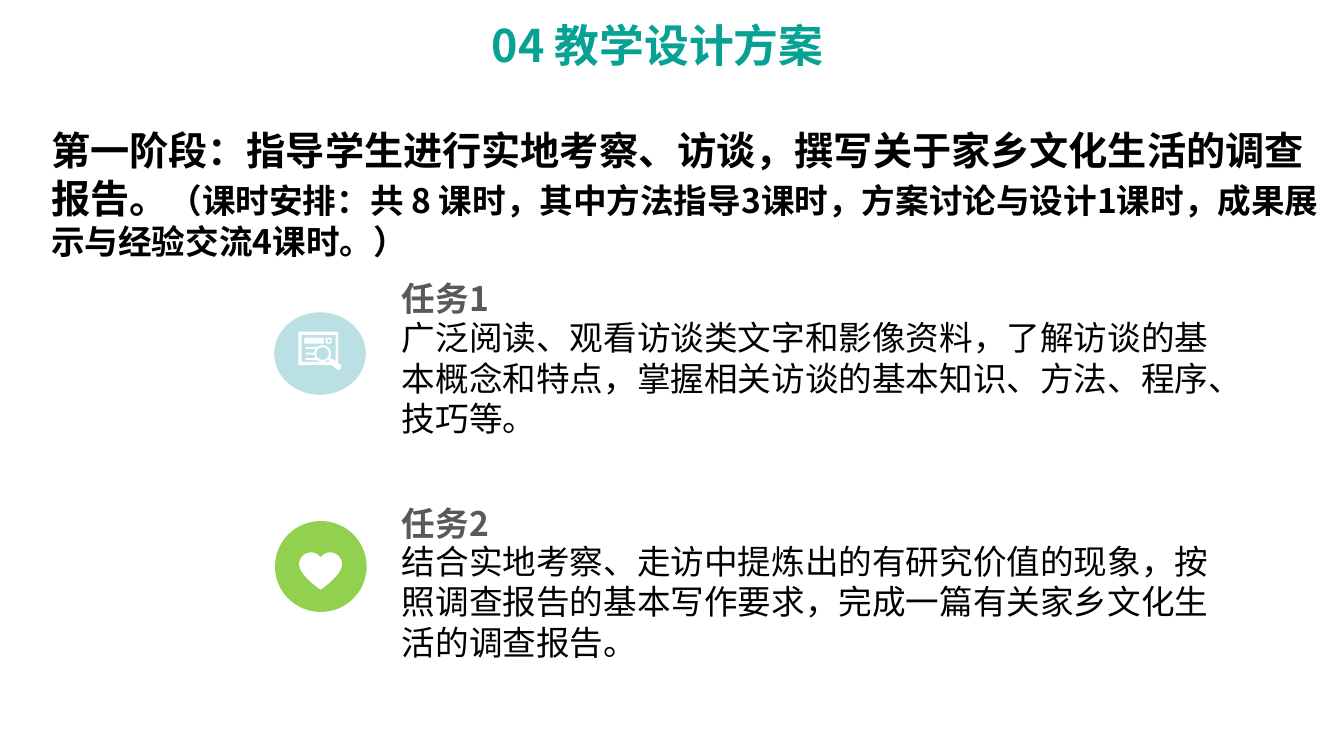
"""Build the teaching design slide with its two student tasks."""
from dataclasses import dataclass
from math import cos, radians, sin

from lxml import etree
from pptx import Presentation
from pptx.dml.color import RGBColor
from pptx.enum.shapes import MSO_SHAPE
from pptx.enum.text import MSO_AUTO_SIZE, PP_ALIGN
from pptx.oxml.ns import qn
from pptx.shapes.base import BaseShape
from pptx.slide import Slide
from pptx.text.text import Font, _Paragraph
from pptx.util import Cm, Pt

OVAL = MSO_SHAPE.OVAL
GROW = MSO_AUTO_SIZE.SHAPE_TO_FIT_TEXT
JUSTIFY = PP_ALIGN.JUSTIFY

TEAL = RGBColor(0x07, 0xA2, 0x94)
BLACK = RGBColor(0, 0, 0)
GREY = RGBColor(0x59, 0x59, 0x59)
WHITE = RGBColor(0xFF, 0xFF, 0xFF)
PALE_BLUE = RGBColor(0xBB, 0xE0, 0xE3)
GREEN = RGBColor(0x92, 0xD0, 0x50)

CJK_FONT = "Noto Sans CJK SC"
LATIN_FONT = "Arial"
TEXT_LEFT = 9.88
BADGE_WIDTH = 2.31
HEART_WIDTH = 1.08

Point = tuple[float, float]
Contour = list[Point]


@dataclass
class Area:
    """Place of an object in centimetres."""
    left: float
    top: float
    width: float
    height: float

    def lengths(self) -> tuple[Cm, Cm, Cm, Cm]:
        """Return the place as slide lengths."""
        return Cm(self.left), Cm(self.top), Cm(self.width), Cm(self.height)


@dataclass
class Task:
    """A task with its round badge and icon."""
    heading: str
    heading_top: float
    body: str
    body_area: Area
    badge: Area
    badge_color: RGBColor
    icon: list[Contour]
    icon_origin: Point


def arc(center: Point, radius: float, start: float = 0, end: float = 360) -> Contour:
    """Return points along an arc, with angles in degrees."""
    steps = 24
    angles = [radians(start + (end - start) * step / steps) for step in range(steps + 1)]
    return [(center[0] + radius * cos(angle), center[1] + radius * sin(angle)) for angle in angles]


def curve(a: Point, b: Point, c: Point, d: Point) -> Contour:
    """Return points along a cubic curve."""
    points = []
    for step in range(17):
        t = step / 16
        weights = ((1 - t) ** 3, 3 * t * (1 - t) ** 2, 3 * t * t * (1 - t), t ** 3)
        points.append((sum(w * p[0] for w, p in zip(weights, (a, b, c, d))),
                       sum(w * p[1] for w, p in zip(weights, (a, b, c, d)))))
    return points


def rectangle(left: float, top: float, right: float, bottom: float) -> Contour:
    """Return the corners of a rectangle."""
    return [(left, top), (right, top), (right, bottom), (left, bottom)]


def heart() -> list[Contour]:
    """Return a heart made of one half and its mirror."""
    half = (curve((0.54, 0.13), (0.6, 0.05), (0.68, 0), (0.77, 0))
            + curve((0.77, 0), (0.94, 0), (1.08, 0.13), (1.08, 0.3))
            + curve((1.08, 0.3), (1.08, 0.58), (0.54, 0.94), (0.54, 0.94)))
    return [half + [(HEART_WIDTH - x, y) for x, y in reversed(half)]]


def document_search() -> list[Contour]:
    """Return a document under a magnifying glass."""
    lens = (0.61, 0.55)
    frame = [(0, 0), (1, 0), (1, 0.79), (1.09, 0.86), (1.07, 0.94), (1, 0.97), (0.84, 0.84), (0, 0.84)]
    window = ([(0.08, 0.08), (0.08, 0.76), (0.79, 0.76), (0.76, 0.71)]
              + arc(lens, 0.21, 50, 125)
              + [(0.18, 0.71), (0.18, 0.66), (0.43, 0.66), (0.41, 0.58), (0.18, 0.58), (0.18, 0.53),
                 (0.39, 0.53), (0.43, 0.43), (0.18, 0.43), (0.18, 0.38), (0.48, 0.38)]
              + arc(lens, 0.21, -128, 35)
              + [(0.81, 0.66), (0.84, 0.69), (0.86, 0.69), (0.94, 0.74), (0.94, 0.08)])
    return [frame, window, arc(lens, 0.16), rectangle(0.15, 0.15, 0.64, 0.3),
            rectangle(0.69, 0.15, 0.84, 0.3), arc((0.77, 0.23), 0.04)]


def set_typeface(font: Font, name: str) -> None:
    """Set the Latin typeface and the East Asian one."""
    font.name = name
    etree.SubElement(font._rPr, qn("a:ea"), typeface=CJK_FONT)


def set_font(font: Font, size: float, color: RGBColor, bold: bool) -> None:
    """Set size, colour and weight."""
    font.size = Pt(size)
    font.bold = bold
    font.color.rgb = color


def add_text(page: Slide, area: Area, text: str, size: float, color: RGBColor,
             bold: bool = False) -> _Paragraph:
    """Add a text box and return its paragraph."""
    box = page.shapes.add_textbox(*area.lengths())
    frame = box.text_frame
    frame.word_wrap = True
    frame.auto_size = GROW
    para = frame.paragraphs[0]
    para.text = text
    set_font(para.font, size, color, bold)
    set_typeface(para.font, CJK_FONT)
    return para


def paint(shape: BaseShape, color: RGBColor) -> None:
    """Give a shape a flat fill without line or shadow."""
    shape.shadow.inherit = False
    shape.fill.solid()
    shape.fill.fore_color.rgb = color
    shape.line.fill.background()


def add_icon(page: Slide, contours: list[Contour], origin: Point) -> None:
    """Draw a white icon from closed contours."""
    placed = [[(Cm(origin[0] + x), Cm(origin[1] + y)) for x, y in contour] for contour in contours]
    builder = page.shapes.build_freeform(*placed[0][0])
    builder.add_line_segments(placed[0][1:])
    for contour in placed[1:]:
        builder.move_to(*contour[0])
        builder.add_line_segments(contour[1:])
    paint(builder.convert_to_shape(), WHITE)


def add_task(page: Slide, task: Task) -> None:
    """Draw a task with its badge."""
    add_text(page, task.body_area, task.body, 24, BLACK)
    heading_area = Area(TEXT_LEFT, task.heading_top, 8.08, 1.4)
    heading = add_text(page, heading_area, task.heading, 24, GREY, True)
    heading.alignment = JUSTIFY
    heading.line_spacing = 1.2
    paint(page.shapes.add_shape(OVAL, *task.badge.lengths()), task.badge_color)
    add_icon(page, task.icon, task.icon_origin)


def add_stage(page: Slide) -> None:
    """Draw the stage statement with its lesson plan."""
    para = add_text(page, Area(1.04, 3.07, 32.44, 3.68), "", 28, BLACK, True)
    for text, size, name in (
        ("第一阶段：指导学生进行实地考察、访谈，撰写关于家乡文化生活的调查报告。", 28, LATIN_FONT),
        ("（课时安排：共 8 课时，其中方法指导3课时，方案讨论与设计1课时，成果展示与经验交流4课时。）", 24, CJK_FONT),
    ):
        span = para.add_run()
        span.text = text
        span.font.size = Pt(size)
        set_typeface(span.font, name)


def main() -> None:
    """Build and save the deck."""
    deck = Presentation()
    deck.slide_width, deck.slide_height = Cm(33.87), Cm(19.05)
    page = deck.slides.add_slide(deck.slide_layouts[6])
    add_text(page, Area(12.14, 0.33, 15.09, 1.63), "04 教学设计方案", 32, TEAL, True)
    add_stage(page)
    for task in (
        Task("任务1", 6.68, "广泛阅读、观看访谈类文字和影像资料，了解访谈的基本概念和特点，掌握相关访谈的基本知识、方法、程序、技巧等。",
             Area(TEXT_LEFT, 7.87, 20.96, 3.33), Area(6.91, 7.87, BADGE_WIDTH, 2.08), PALE_BLUE,
             document_search(), (7.52, 8.36)),
        Task("任务2", 12.34, "结合实地考察、走访中提炼出的有研究价值的现象，按照调查报告的基本写作要求，完成一篇有关家乡文化生活的调查报告。",
             Area(TEXT_LEFT, 13.51, 21.54, 3.33), Area(6.93, 13.13, BADGE_WIDTH, 2.29), GREEN,
             heart(), (7.54, 13.92)),
    ):
        add_task(page, task)
    deck.save("out.pptx")


if __name__ == "__main__":
    main()
